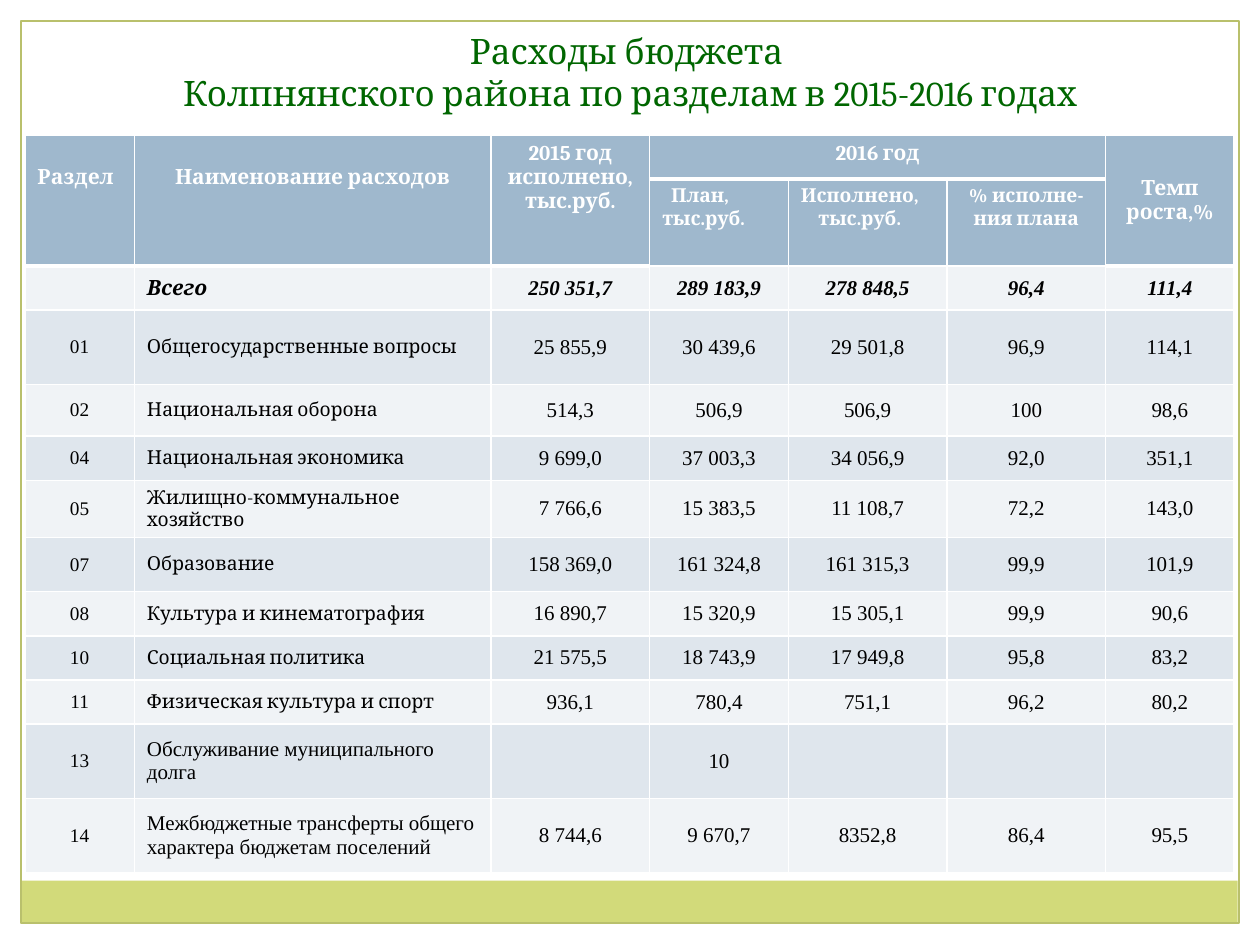
from lxml.etree import SubElement
from pptx import Presentation
from pptx.dml.color import RGBColor
from pptx.enum.shapes import MSO_SHAPE
from pptx.enum.text import MSO_ANCHOR, PP_ALIGN
from pptx.oxml.ns import qn
from pptx.util import Pt

WHITE = RGBColor(0xFF, 0xFF, 0xFF)
BLACK = RGBColor(0, 0, 0)
GREEN = RGBColor(0, 0x66, 0)
LIME = RGBColor(0xD2, 0xDA, 0x7A)
OLIVE = RGBColor(0xB9, 0xC0, 0x6C)
BLUE = RGBColor(0x9F, 0xB8, 0xCD)
BANDS = RGBColor(0xF0, 0xF3, 0xF6), RGBColor(0xDF, 0xE6, 0xED)
SERIF, ROMAN = "Cambria", "Times New Roman"
LEFT, MID = PP_ALIGN.LEFT, PP_ALIGN.CENTER

TITLE = ["Расходы бюджета ", "Колпнянского района по разделам в 2015-2016 годах"]

# row, column, rows spanned, columns spanned, lines, size, alignment
HEADS = [
    (0, 0, 2, 1, ["Раздел"], 12, LEFT),
    (0, 1, 2, 1, ["Наименование расходов"], 12, MID),
    (0, 2, 2, 1, ["2015 год", "исполнено, тыс.руб."], 12, MID),
    (0, 3, 1, 3, ["2016 год"], 12, MID),
    (0, 6, 2, 1, ["Темп роста,%"], 12, MID),
    (1, 3, 1, 1, ["План, тыс.руб."], 11, LEFT),
    (1, 4, 1, 1, ["Исполнено,", "тыс.руб."], 11, LEFT),
    (1, 5, 1, 1, ["% исполне-", "ния плана"], 11, MID),
]
ROWS = [
    ("", "Всего", "250 351,7", "289 183,9", "278 848,5", "96,4", "111,4"),
    ("01", "Общегосударственные вопросы", "25 855,9", "30 439,6", "29 501,8", "96,9", "114,1"),
    ("02", "Национальная оборона", "514,3", "506,9", "506,9", "100", "98,6"),
    ("04", "Национальная экономика", "9 699,0", "37 003,3", "34 056,9", "92,0", "351,1"),
    ("05", "Жилищно-коммунальное хозяйство", "7 766,6", "15 383,5", "11 108,7", "72,2", "143,0"),
    ("07", "Образование", "158 369,0", "161 324,8", "161 315,3", "99,9", "101,9"),
    ("08", "Культура и кинематография", "16 890,7", "15 320,9", "15 305,1", "99,9", "90,6"),
    ("10", "Социальная политика", "21 575,5", "18 743,9", "17 949,8", "95,8", "83,2"),
    ("11", "Физическая культура и спорт", "936,1", "780,4", "751,1", "96,2", "80,2"),
    ("13", "Обслуживание муниципального долга", "", "10", "", "", ""),
    ("14", "Межбюджетные трансферты общего характера бюджетам поселений",
     "8 744,6", "9 670,7", "8352,8", "86,4", "95,5"),
]
WIDTHS = [62.6, 203.8, 90.7, 79.2, 90.7, 90.7, 73.4]
HEIGHTS = [25.2, 49.7, 25.2, 42.5, 29.5, 25.2, 31, 31, 25.2, 25.2, 25.2, 42.5, 42.5]


def write(frame, lines, size, face, color, align, bold=False, italic=False):
    for i, line in enumerate(lines):
        para = frame.add_paragraph() if i else frame.paragraphs[0]
        para.alignment = align
        if not line:
            # an empty cell still needs a size, or its row grows
            SubElement(para._p, qn("a:endParaRPr"), sz=str(size * 100))
            continue
        run = para.add_run()
        run.text = line
        font = run.font
        font.size, font.name, font.bold, font.italic = Pt(size), face, bold, italic
        font.color.rgb = color


def border(cell, side, width):
    line = SubElement(cell._tc.get_or_add_tcPr(), qn("a:ln" + side), w=str(Pt(width)))
    fill = SubElement(line, qn("a:solidFill"))
    SubElement(fill, qn("a:srgbClr"), val=str(WHITE))


def block(x, y, w, h, fill=None, edge=None):
    box = slide.shapes.add_shape(MSO_SHAPE.RECTANGLE, Pt(x), Pt(y), Pt(w), Pt(h))
    box.shadow.inherit = False
    if fill is None:
        box.fill.background()
    else:
        box.fill.solid()
        box.fill.fore_color.rgb = fill
    if edge is None:
        box.line.fill.background()
    else:
        box.line.color.rgb = edge
        box.line.width = Pt(0.75)


deck = Presentation()
deck.slide_width, deck.slide_height = Pt(720), Pt(540)
slide = deck.slides.add_slide(deck.slide_layouts[6])

# White margins, bottom band and frame
for side in [(0, 0, 720, 12), (708, 0, 12, 540), (0, 0, 12, 540)]:
    block(*side, fill=WHITE)
block(11.8, 503.3, 695.5, 24.5, fill=LIME)
block(12, 12, 696, 515.5, edge=OLIVE)

# Table grid
grid = slide.shapes.add_table(len(HEIGHTS), len(WIDTHS), Pt(14.2), Pt(77.2),
                              Pt(sum(WIDTHS)), Pt(sum(HEIGHTS))).table
grid.first_row = grid.horz_banding = False
for col, width in zip(grid.columns, WIDTHS):
    col.width = Pt(width)
for row, height in zip(grid.rows, HEIGHTS):
    row.height = Pt(height)

# Borders and fills
for r in range(len(HEIGHTS)):
    for c in range(len(WIDTHS)):
        cell = grid.cell(r, c)
        thick = r == 0 or (r == 1 and c not in (3, 4, 5))
        if c == 0:
            border(cell, "L", 1)
        border(cell, "R", 1)
        if r == 0:
            border(cell, "T", 1)
        border(cell, "B", 3 if thick else 1)
        cell.fill.solid()
        cell.fill.fore_color.rgb = BLUE if r < 2 else BANDS[r % 2]

# Header
for r, c, down, across, lines, size, align in HEADS:
    cell = grid.cell(r, c)
    if down * across > 1:
        cell.merge(grid.cell(r + down - 1, c + across - 1))
    write(cell.text_frame, lines, size, SERIF, WHITE, align, bold=True)
for c in (0, 1):
    grid.cell(0, c).margin_top = Pt(17.5)
grid.cell(0, 6).vertical_anchor = MSO_ANCHOR.MIDDLE
for c, n, shift in [(3, 0, 5), (4, 1, 10)]:
    para = grid.cell(1, c).text_frame.paragraphs[n]
    para._p.get_or_add_pPr().set("indent", str(Pt(shift)))

# Body
for r, row in enumerate(ROWS, 2):
    total, late = r == 2, row[0] in ("13", "14")
    for c, text in enumerate(row):
        cell = grid.cell(r, c)
        cell.vertical_anchor = MSO_ANCHOR.MIDDLE
        named = c == 1
        small = c == 0 or (named and not total and not late)
        write(cell.text_frame, [text], 11 if small else 12,
              SERIF if named and not late else ROMAN, BLACK,
              LEFT if named else MID, total, total)

# Title
frame = slide.shapes.add_textbox(Pt(14.2), Pt(15.1), Pt(692), Pt(51)).text_frame
frame.word_wrap = True
frame.vertical_anchor = MSO_ANCHOR.MIDDLE
write(frame, TITLE, 20, SERIF, GREEN, MID)

deck.save("out.pptx")
